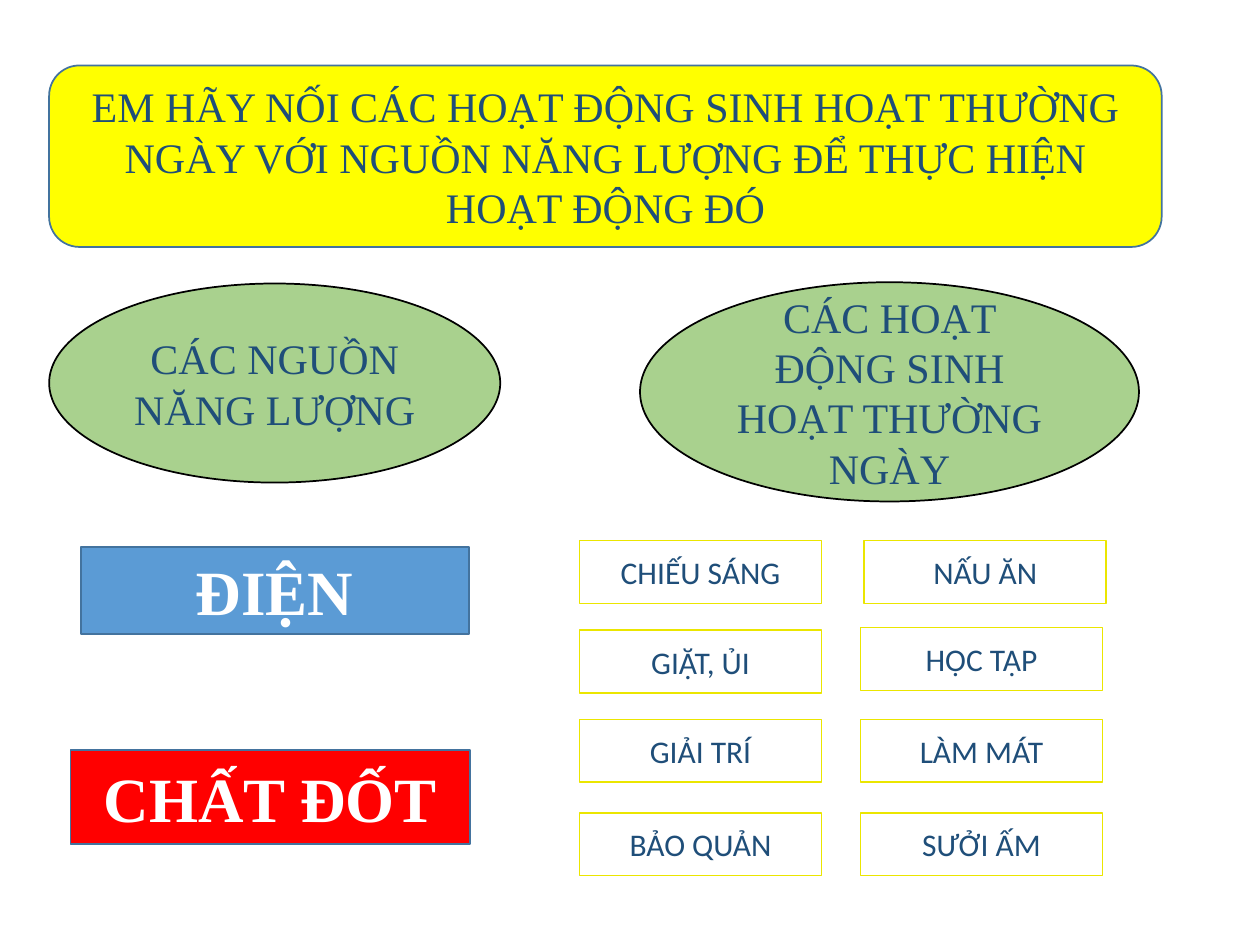
from pptx import Presentation
from pptx import util as u
from pptx.dml.color import RGBColor
from pptx.enum import shapes, text

# Content: kind, words, (left, top, width, height)
TITLE = ("EM HÃY NỐI CÁC HOẠT ĐỘNG SINH HOẠT THƯỜNG NGÀY VỚI "
         "NGUỒN NĂNG LƯỢNG ĐỂ THỰC HIỆN HOẠT ĐỘNG ĐÓ",
         (0.39, 0.52, 8.83, 1.44))
HEADS = [
    ("CÁC NGUỒN NĂNG LƯỢNG", (0.39, 2.25, 3.58, 1.58)),
    ("CÁC HOẠT ĐỘNG SINH HOẠT THƯỜNG NGÀY", (5.08, 2.24, 3.96, 1.74)),
]
FUELS = [
    ("ĐIỆN", "blue", (0.64, 4.34, 3.08, 0.69)),
    ("CHẤT ĐỐT", "red", (0.56, 5.95, 3.17, 0.75)),
]
TASKS = [
    ("CHIẾU SÁNG", "NẤU ĂN"),
    ("GIẶT, ỦI", "HỌC TẬP"),
    ("GIẢI TRÍ", "LÀM MÁT"),
    ("BẢO QUẢN", "SƯỞI ẤM"),
]
COLS = (4.6, 6.83)
ROWS = (4.29, 5, 5.71, 6.45)
CARD = (1.92, 0.5)
NUDGE = {"NẤU ĂN": (0.03, 0), "HỌC TẬP": (0, -0.02)}

THEME = {
    "blue": "5B9BD5", "red": "FF0000", "green": "A9D18E", "yellow": "FFFF00",
    "edge": "43739E", "gold": "EBE600", "black": "000000",
    "ink": "1F4E79", "white": "FFFFFF",
    "serif": "Times New Roman", "sans": "Calibri",
    "big": 36, "mid": 24, "small": 18,
}
KIND = shapes.MSO_SHAPE


def color(name):
    return RGBColor.from_string(THEME[name])


def label(slide, words, box, kind=KIND.RECTANGLE, fill=None, line="edge",
          ink="ink", font="serif", size="mid", bold=False):
    """Add one outlined shape with centred text."""
    shape = slide.shapes.add_shape(kind, *map(u.Inches, box))
    shape.shadow.inherit = False
    if fill:
        shape.fill.solid()
        shape.fill.fore_color.rgb = color(fill)
    else:
        shape.fill.background()
    shape.line.color.rgb = color(line)
    shape.line.width = u.Pt(1)
    frame = shape.text_frame
    frame.word_wrap = True
    frame.vertical_anchor = text.MSO_ANCHOR.MIDDLE
    para = frame.paragraphs[0]
    para.alignment = text.PP_ALIGN.CENTER
    run = para.add_run()
    run.text = words
    run.font.name = THEME[font]
    run.font.size = u.Pt(THEME[size])
    run.font.bold = bold
    run.font.color.rgb = color(ink)


def main():
    deck = Presentation()
    deck.slide_width, deck.slide_height = u.Inches(10), u.Inches(7.5)
    slide = deck.slides.add_slide(deck.slide_layouts[6])

    # Energy sources
    for words, fill, box in FUELS:
        label(slide, words, box, fill=fill, ink="white", size="big", bold=True)

    # Grid of activities
    for top, pair in zip(ROWS, TASKS):
        for left, words in zip(COLS, pair):
            dx, dy = NUDGE.get(words, (0, 0))
            label(slide, words, (left + dx, top + dy, *CARD),
                  line="gold", font="sans", size="small")

    # Column heads
    for words, box in HEADS:
        label(slide, words, box, kind=KIND.OVAL, fill="green", line="black")

    # Title
    label(slide, *TITLE, kind=KIND.ROUNDED_RECTANGLE, fill="yellow")

    deck.save("out.pptx")


if __name__ == "__main__":
    main()
